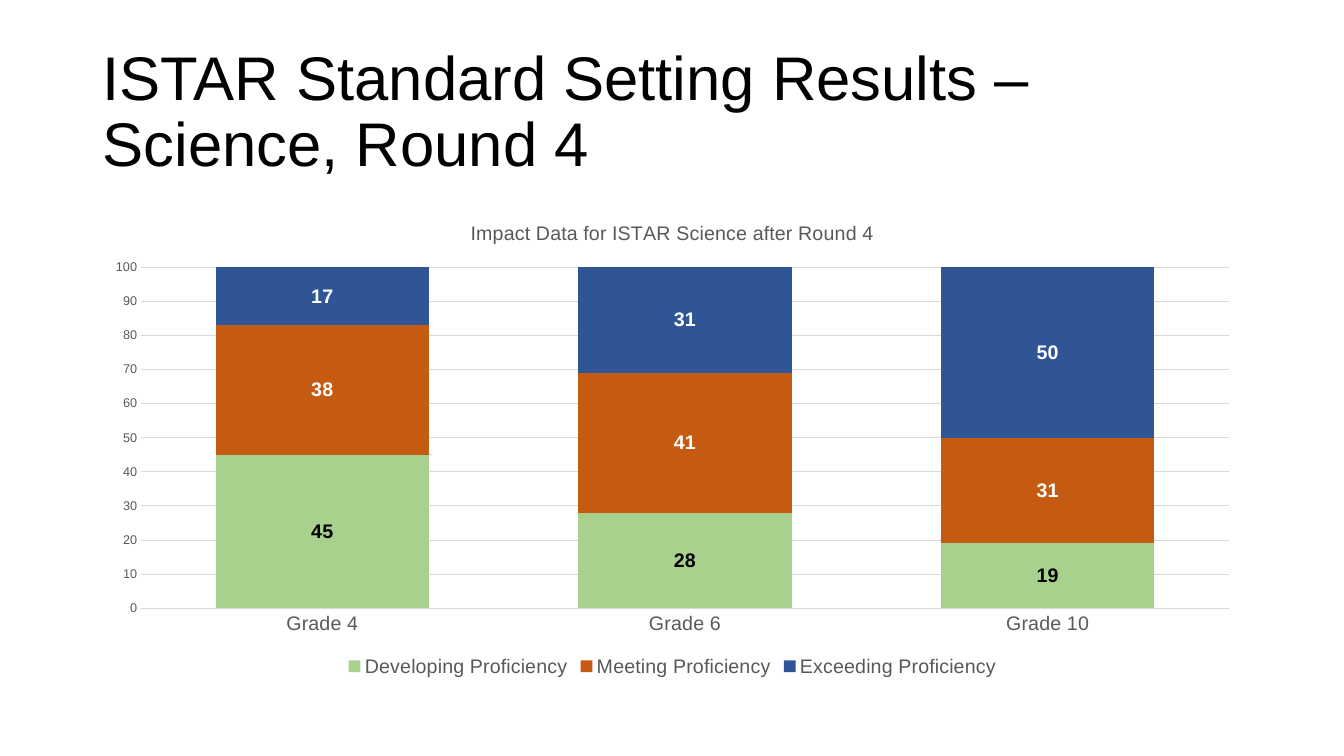
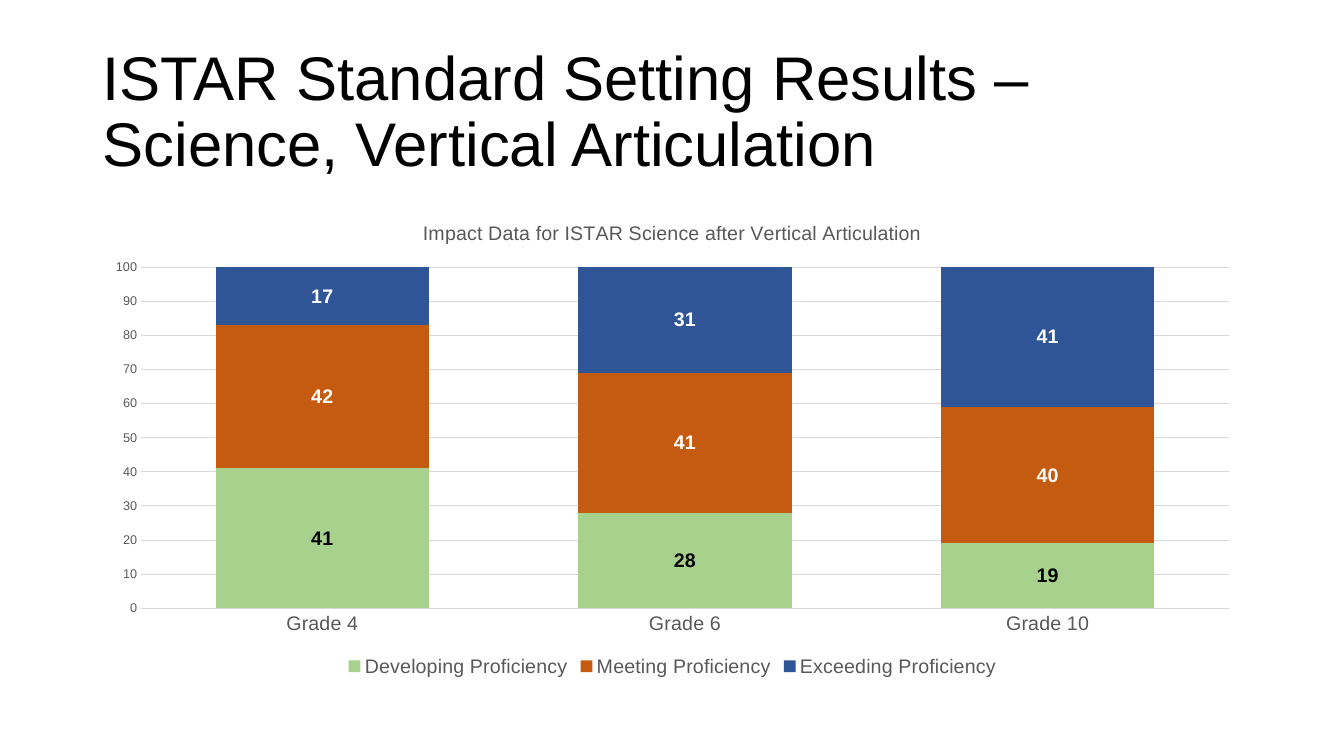
import pptx
import pptx.util
import pptx.dml.color
import pptx.chart.data
import pptx.enum.chart
import pptx.enum.text

Inches = pptx.util.Inches
Pt = pptx.util.Pt
RGBColor = pptx.dml.color.RGBColor

FONT = "Arial"
BLACK = RGBColor(0x00, 0x00, 0x00)
WHITE = RGBColor(0xFF, 0xFF, 0xFF)
GRAY = RGBColor(0x59, 0x59, 0x59)
RULE = RGBColor(0xD9, 0xD9, 0xD9)
GREEN = RGBColor(0xA9, 0xD1, 0x8E)
ORANGE = RGBColor(0xC5, 0x5A, 0x11)
BLUE = RGBColor(0x2F, 0x55, 0x97)

LEFT, WIDTH = Inches(0.92), Inches(11.5)
GRADES = ["Grade 4", "Grade 6", "Grade 10"]
LEVELS = [
    ("Developing Proficiency", GREEN, BLACK),
    ("Meeting Proficiency", ORANGE, WHITE),
    ("Exceeding Proficiency", BLUE, WHITE),
]
RESULTS = [
    ("Round 4", [(45, 28, 19), (38, 41, 31), (17, 31, 50)]),
    ("Vertical Articulation", [(41, 28, 19), (42, 41, 40), (17, 31, 41)]),
]


def set_font(font, size, color, bold=False):
    font.name = FONT
    font.size = Pt(size)
    font.color.rgb = color
    font.bold = bold


def set_line(line):
    line.color.rgb = RULE
    line.width = Pt(0.75)


prs = pptx.Presentation()
prs.slide_width = Inches(13.33)
prs.slide_height = Inches(7.5)

for stage, rows in RESULTS:
    s = prs.slides.add_slide(prs.slide_layouts[6])

    tf = s.shapes.add_textbox(LEFT, Inches(0.4), WIDTH, Inches(1.45)).text_frame
    tf.word_wrap = True
    tf.vertical_anchor = pptx.enum.text.MSO_ANCHOR.MIDDLE
    p = tf.paragraphs[0]
    p.line_spacing = 0.9
    r = p.add_run()
    r.text = f"ISTAR Standard Setting Results – Science, {stage}"
    set_font(r.font, 44, BLACK)

    data = pptx.chart.data.CategoryChartData(number_format="0")
    data.categories = GRADES
    for (name, fill, label), values in zip(LEVELS, rows):
        data.add_series(name, values)
    chart = s.shapes.add_chart(
        pptx.enum.chart.XL_CHART_TYPE.COLUMN_STACKED,
        LEFT, Inches(2), WIDTH, Inches(4.76), data,
    ).chart
    set_font(chart.font, 10, BLACK)

    chart.has_title = True
    chart.chart_title.include_in_layout = False
    r = chart.chart_title.text_frame.paragraphs[0].add_run()
    r.text = f"Impact Data for ISTAR Science after {stage}"
    set_font(r.font, 14, GRAY)

    chart.has_legend = True
    chart.legend.position = pptx.enum.chart.XL_LEGEND_POSITION.BOTTOM
    chart.legend.include_in_layout = False
    set_font(chart.legend.font, 14, GRAY)

    for axis, size in ((chart.category_axis, 14), (chart.value_axis, 9)):
        axis.major_tick_mark = pptx.enum.chart.XL_TICK_MARK.NONE
        axis.minor_tick_mark = pptx.enum.chart.XL_TICK_MARK.NONE
        set_font(axis.tick_labels.font, size, GRAY)
    set_line(chart.category_axis.format.line)
    axis = chart.value_axis
    axis.minimum_scale = 0
    axis.maximum_scale = 100
    axis.major_unit = 10
    axis.format.line.fill.background()
    axis.has_major_gridlines = True
    set_line(axis.major_gridlines.format.line)
    axis.tick_labels.number_format = "0"
    axis.tick_labels.number_format_is_linked = False

    plot = chart.plots[0]
    plot.gap_width = 70
    plot.overlap = 100
    plot.vary_by_categories = False
    for series, (name, fill, label) in zip(plot.series, LEVELS):
        series.format.fill.solid()
        series.format.fill.fore_color.rgb = fill
        labels = series.data_labels
        labels.show_value = True
        labels.number_format = "0"
        labels.number_format_is_linked = False
        labels.position = pptx.enum.chart.XL_LABEL_POSITION.CENTER
        set_font(labels.font, 14, label, True)

prs.save("out.pptx")
